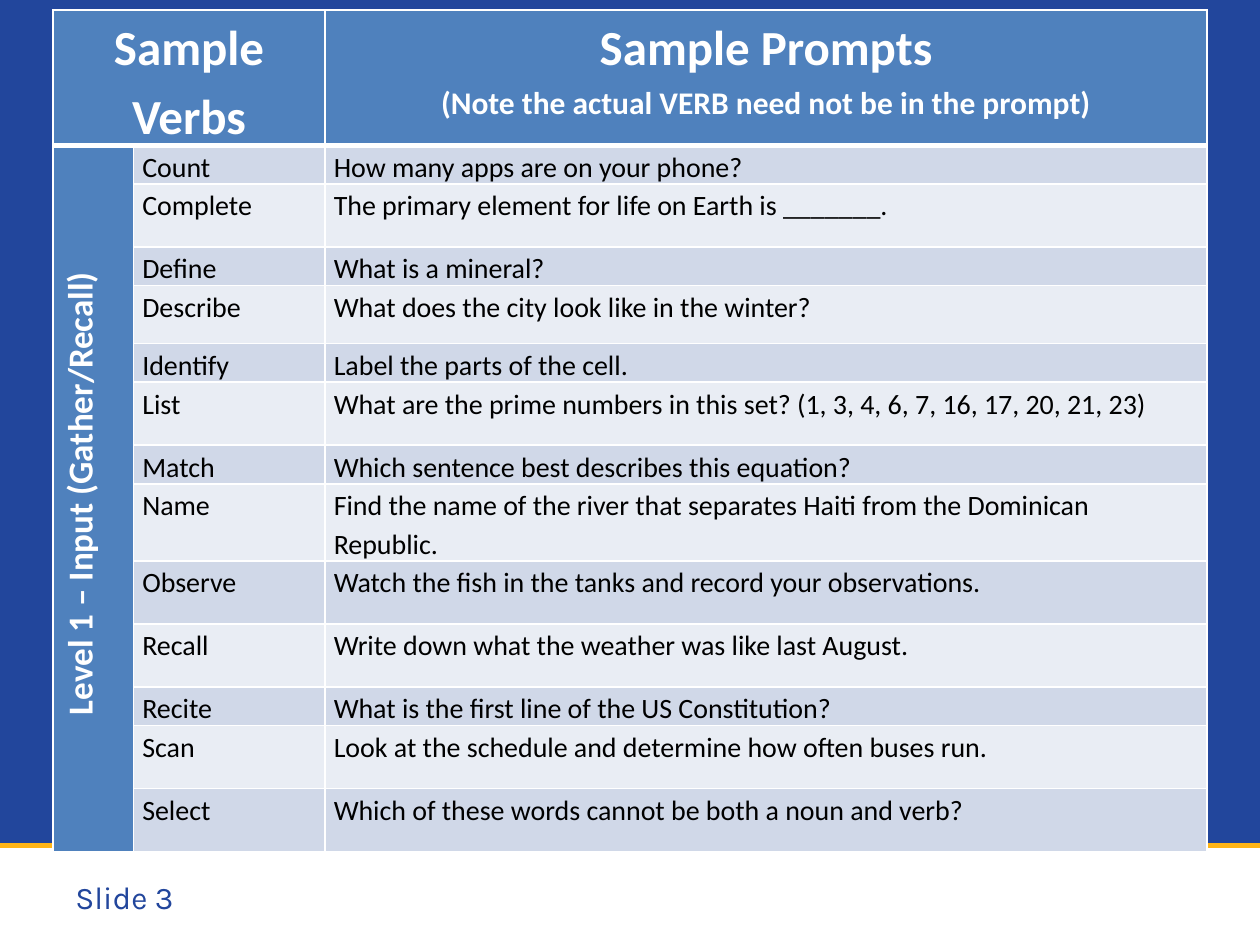
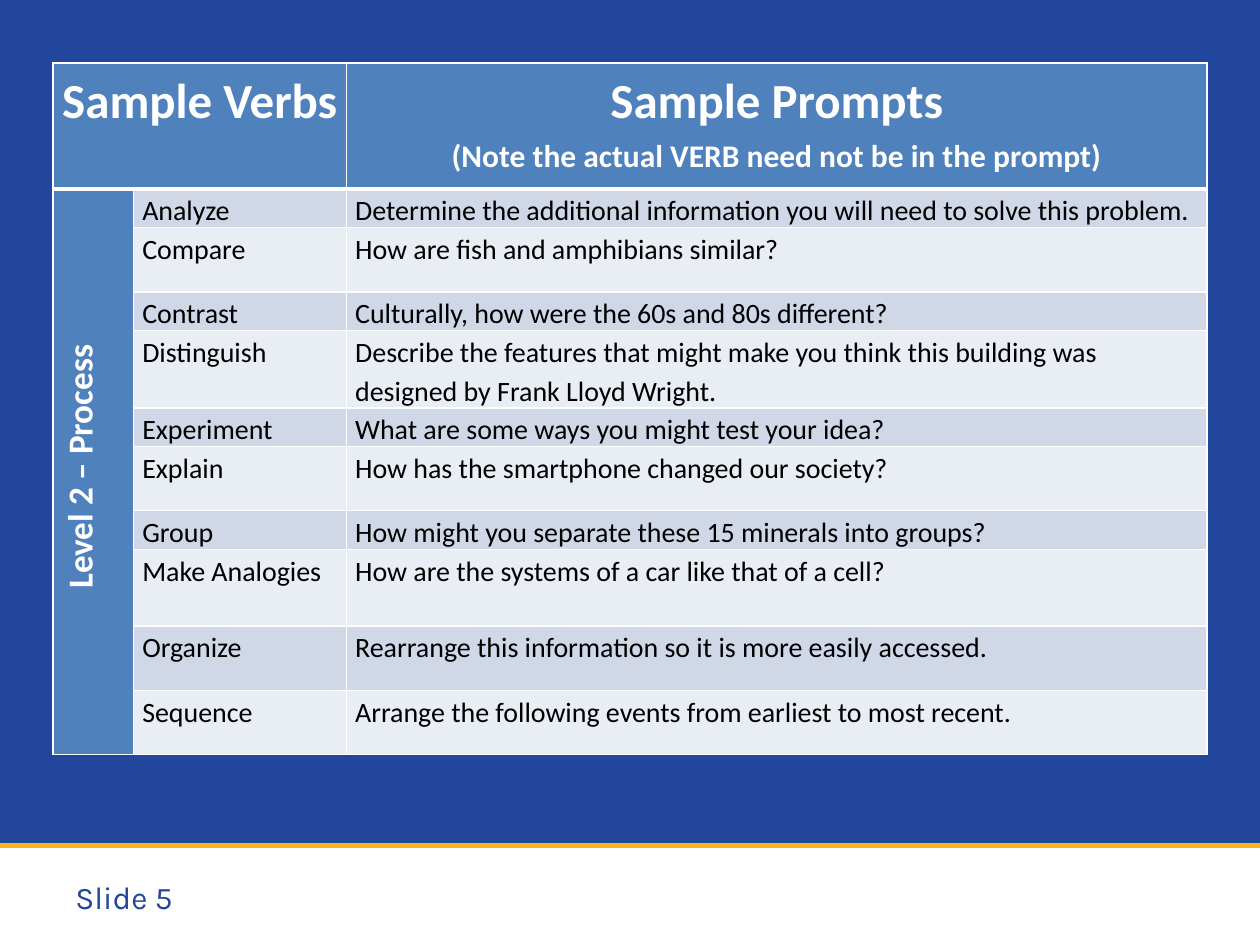
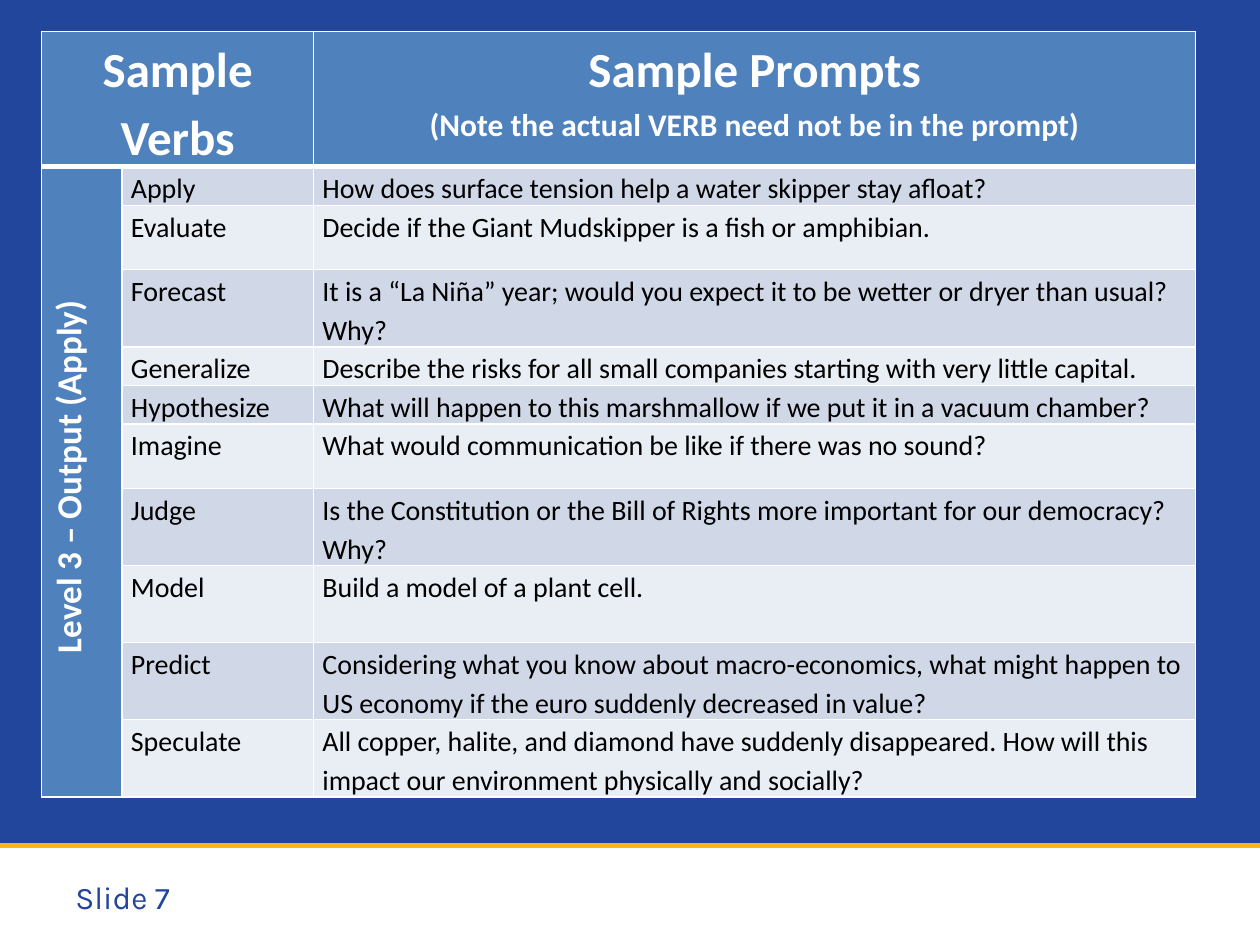
from lxml import etree
from pptx import Presentation
from pptx.dml.color import RGBColor
from pptx.enum import shapes, text
from pptx.oxml import ns
from pptx.util import Inches, Pt

BLUE, GOLD, WHITE, BLACK = "22469C", "FFB517", "FFFFFF", "000000"
HEADER, BANDS = "4F81BD", ("D0D8E8", "E9EDF4")
TABLE_FONT, FOOTER_FONT = "Calibri", "Karla"
FOOTER_TOP = 6.71
PROMPT_TITLE = [("Sample Prompts", 28),
                ("(Note the actual VERB need not be in the prompt)", 18)]

LEVELS = [
    {
        "number": 3, "level": "Level 1 – Input (Gather/Recall)",
        "at": (0.42, 0.08), "cols": (0.64, 1.52, 7), "verb_title": ["Sample Verbs"],
        "heights": (0.97, 0.3, 0.5, 0.3, 0.46, 0.3, 0.5, 0.3, 0.59, 0.5, 0.5, 0.3, 0.5, 0.5),
        "prompts": [
            ("Count", "How many apps are on your phone?"),
            ("Complete", "The primary element for life on Earth is _______."),
            ("Define", "What is a mineral?"),
            ("Describe", "What does the city look like in the winter?"),
            ("Identify", "Label the parts of the cell."),
            ("List", "What are the prime numbers in this set? (1, 3, 4, 6, 7, 16, 17, 20, 21, 23)"),
            ("Match", "Which sentence best describes this equation?"),
            ("Name", "Find the name of the river that separates Haiti from the Dominican Republic."),
            ("Observe", "Watch the fish in the tanks and record your observations."),
            ("Recall", "Write down what the weather was like last August."),
            ("Recite", "What is the first line of the US Constitution?"),
            ("Scan", "Look at the schedule and determine how often buses run."),
            ("Select", "Which of these words cannot be both a noun and verb?"),
        ],
    },
    {
        "number": 5, "level": "Level 2 – Process",
        "at": (0.42, 0.5), "cols": (0.64, 1.69, 6.83), "verb_title": ["Sample Verbs"],
        "heights": (1, 0.3, 0.51, 0.3, 0.3, 0.3, 0.51, 0.3, 0.61, 0.51, 0.51),
        "prompts": [
            ("Analyze", "Determine the additional information you will need to solve this problem."),
            ("Compare", "How are fish and amphibians similar?"),
            ("Contrast", "Culturally, how were the 60s and 80s different?"),
            ("Distinguish", "Describe the features that might make you think this building was "
                            "designed by Frank Lloyd Wright."),
            ("Experiment", "What are some ways you might test your idea?"),
            ("Explain", "How has the smartphone changed our society?"),
            ("Group", "How might you separate these 15 minerals into groups?"),
            ("Make Analogies", "How are the systems of a car like that of a cell?"),
            ("Organize", "Rearrange this information so it is more easily accessed."),
            ("Sequence", "Arrange the following events from earliest to most recent."),
        ],
    },
    {
        "number": 7, "level": "Level 3 – Output (Apply)",
        "at": (0.33, 0.25), "cols": (0.64, 1.52, 7), "verb_title": ["Sample", "Verbs"],
        "heights": (1, 0.3, 0.51, 0.3, 0.3, 0.3, 0.51, 0.3, 0.61, 0.51, 0.51),
        "prompts": [
            ("Apply", "How does surface tension help a water skipper stay afloat?"),
            ("Evaluate", "Decide if the Giant Mudskipper is a fish or amphibian."),
            ("Forecast", "It is a “La Niña” year; would you expect it to be wetter or dryer "
                         "than usual? Why?"),
            ("Generalize", "Describe the risks for all small companies starting with very little capital."),
            ("Hypothesize", "What will happen to this marshmallow if we put it in a vacuum chamber?"),
            ("Imagine", "What would communication be like if there was no sound?"),
            ("Judge", "Is the Constitution or the Bill of Rights more important for our democracy? Why?"),
            ("Model", "Build a model of a plant cell."),
            ("Predict", "Considering what you know about macro-economics, what might happen to "
                        "US economy if the euro suddenly decreased in value?"),
            ("Speculate", "All copper, halite, and diamond have suddenly disappeared. How will this "
                          "impact our environment physically and socially?"),
        ],
    },
]


def rgb(color):
    return RGBColor.from_string(color)


def fill_solid(fill, color):
    fill.solid()
    fill.fore_color.rgb = rgb(color)


def set_font(p, name, size, color, bold=False):
    p.font.name, p.font.size, p.font.bold = name, Pt(size), bold
    p.font.color.rgb = rgb(color)


def add_footer(s, number):
    """White band with a gold rule above it and the slide number."""
    band = s.shapes.add_shape(shapes.MSO_SHAPE.RECTANGLE, Inches(-0.03), Inches(FOOTER_TOP),
                              Inches(10.03), Inches(0.79))
    band.shadow.inherit = False
    fill_solid(band.fill, WHITE)
    band.line.fill.background()

    rule = s.shapes.add_connector(shapes.MSO_CONNECTOR.STRAIGHT, 0, Inches(FOOTER_TOP),
                                  Inches(10), Inches(FOOTER_TOP))
    rule.line.color.rgb = rgb(GOLD)
    rule.line.width = Pt(3)
    etree.SubElement(rule._element.spPr, ns.qn("a:effectLst"))

    tf = s.shapes.add_textbox(Inches(0.5), Inches(6.92), Inches(1.58), Inches(0.42)).text_frame
    tf.word_wrap = True
    tf.auto_size = text.MSO_AUTO_SIZE.SHAPE_TO_FIT_TEXT
    p = tf.paragraphs[0]
    p.text = f"Slide {number}"
    set_font(p, FOOTER_FONT, 18, BLUE)


def set_borders(cell, top, bottom):
    """White borders, 1 pt at the sides; they must precede the cell's fill."""
    tcPr = cell._tc.get_or_add_tcPr()
    for i, (side, width) in enumerate(zip("LRTB", (1, 1, top, bottom))):
        ln = etree.Element(ns.qn(f"a:ln{side}"), w=str(Pt(width)))
        solid = etree.SubElement(ln, ns.qn("a:solidFill"))
        etree.SubElement(solid, ns.qn("a:srgbClr"), val=WHITE)
        tcPr.insert(i, ln)


def style_cell(cell, row, col):
    cell.margin_left = cell.margin_right = Inches(0.07)
    cell.margin_top = cell.margin_bottom = 0
    is_heading = row == 0 or col == 0
    fill_solid(cell.fill, HEADER if is_heading else BANDS[(row - 1) % 2])
    set_borders(cell, top=3 if row == 1 else 1, bottom=3 if row == 0 else 1)
    set_font(cell.text_frame.paragraphs[0], TABLE_FONT, 16, BLACK)


def write_cell(cell, lines, color=WHITE, bold=True, align=text.PP_ALIGN.CENTER, after=0):
    """Write (text, size) lines; after is the space below the last one."""
    tf = cell.text_frame
    for i, (line, size) in enumerate(lines):
        p = tf.add_paragraph() if i else tf.paragraphs[0]
        p.text = line
        p.alignment = align
        p.line_spacing = 1.15
        p.space_after = Pt(after if i == len(lines) - 1 else 0)
        set_font(p, TABLE_FONT, size, color, bold)


def write_level(cell, level):
    """Heading that reads upwards along the first column."""
    write_cell(cell, [(level, 20)])
    cell._tc.get_or_add_tcPr().set("vert", "vert270")
    cell.text_frame.paragraphs[0]._p.get_or_add_pPr().set("marL", str(Inches(0.08)))


def add_prompt_table(s, at, cols, heights, level, verb_title, prompts):
    left, top = at
    table = s.shapes.add_table(len(heights), len(cols), Inches(left), Inches(top),
                               Inches(sum(cols)), Inches(sum(heights))).table
    for column, width in zip(table.columns, cols):
        column.width = Inches(width)
    for row, height in zip(table.rows, heights):
        row.height = Inches(height)
    for row in range(len(heights)):
        for col in range(len(cols)):
            style_cell(table.cell(row, col), row, col)

    table.cell(0, 0).merge(table.cell(0, 1))
    table.cell(1, 0).merge(table.cell(len(prompts), 0))
    write_cell(table.cell(0, 0), [(line, 28) for line in verb_title], after=10)
    write_cell(table.cell(0, 2), PROMPT_TITLE)
    write_level(table.cell(1, 0), level)
    for row, prompt in enumerate(prompts, 1):
        for col, words in enumerate(prompt, 1):
            write_cell(table.cell(row, col), [(words, 16)], BLACK, False,
                       text.PP_ALIGN.LEFT, after=6)


def main():
    prs = Presentation()
    prs.slide_width, prs.slide_height = Inches(10), Inches(7.5)
    fill_solid(prs.slide_master.background.fill, BLUE)
    for content in LEVELS:
        s = prs.slides.add_slide(prs.slide_layouts[6])
        add_footer(s, content["number"])
        add_prompt_table(s, content["at"], content["cols"], content["heights"],
                         content["level"], content["verb_title"], content["prompts"])
    prs.save("out.pptx")


if __name__ == "__main__":
    main()
